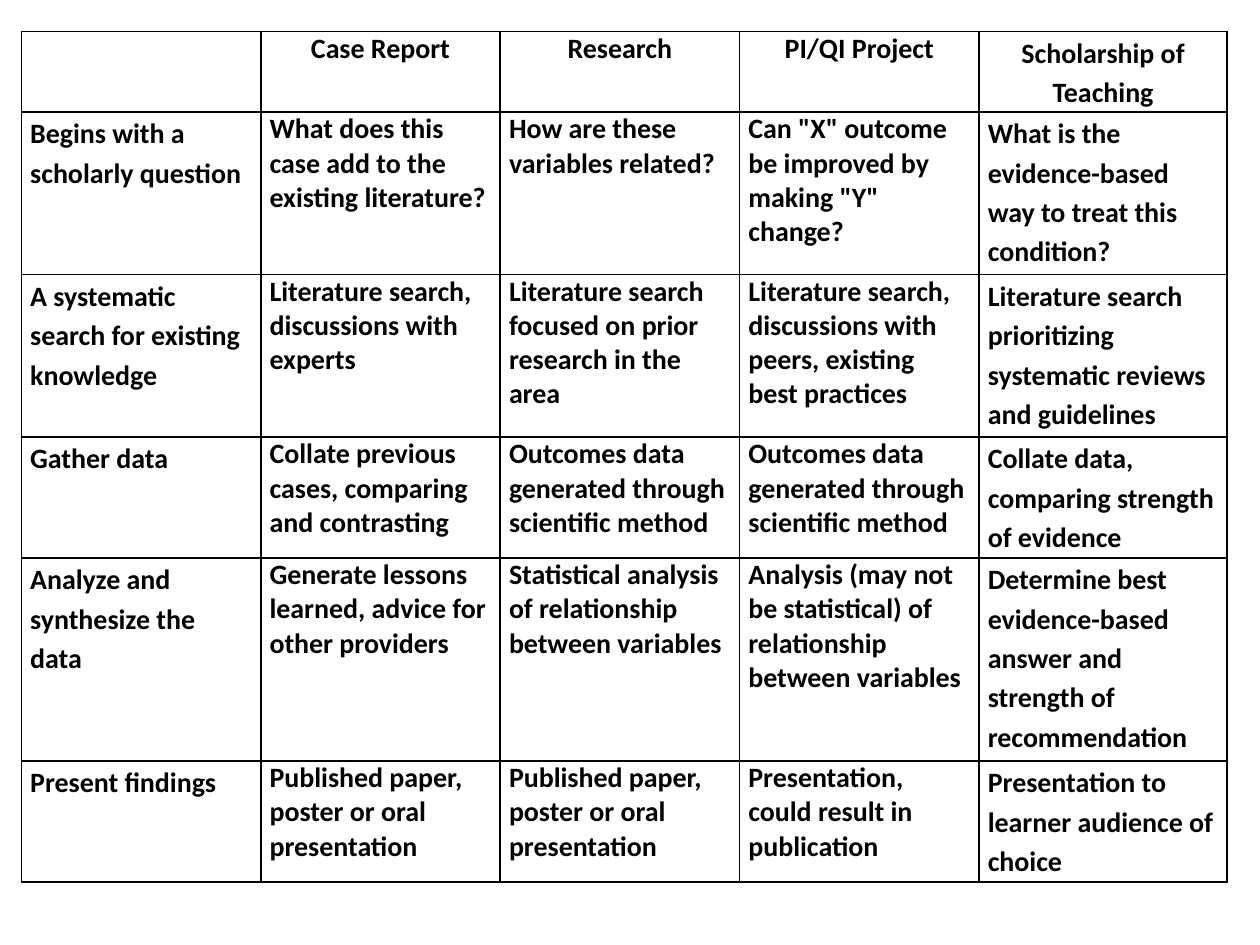
from lxml import etree
from pptx import Presentation, util as u
from pptx.dml.color import RGBColor
from pptx.enum import text
from pptx.oxml import ns

SLIDE_SIZE = (10, 7.5)
TABLE_ORIGIN = (0.17, 0.25)
COLUMN_WIDTHS = [1.9] * 4 + [1.97]
ROW_HEIGHTS = [0.64, 1.29, 1.29, 0.96, 1.61, 0.96]
INK = "000000"
FONT = {"name": "Calibri", "size": u.Pt(16), "bold": True}
MARGINS = {
    "margin_left": u.Inches(0.07),
    "margin_right": u.Inches(0.07),
    "margin_top": 0,
    "margin_bottom": 0,
}
LOOSE_SPACING = 1.15
LOOSE_COLUMNS = (0, 4)

ROWS = [
    ["", "Case Report", "Research", "PI/QI Project", "Scholarship of Teaching"],
    [
        "Begins with a scholarly question",
        "What does this case add to the existing literature?",
        "How are these variables related?",
        'Can "X" outcome be improved by making "Y" change?',
        "What is the evidence-based way to treat this condition?",
    ],
    [
        "A systematic search for existing knowledge",
        "Literature search, discussions with experts",
        "Literature search focused on prior research in the area",
        "Literature search, discussions with peers, existing best practices",
        "Literature search prioritizing systematic reviews and guidelines",
    ],
    [
        "Gather data",
        "Collate previous cases, comparing and contrasting",
        "Outcomes data generated through scientific method",
        "Outcomes data generated through scientific method",
        "Collate data, comparing strength of evidence",
    ],
    [
        "Analyze and synthesize the data",
        "Generate lessons learned, advice for other providers",
        "Statistical analysis of relationship between variables",
        "Analysis (may not be statistical) of relationship between variables",
        "Determine best evidence-based answer and strength of recommendation",
    ],
    [
        "Present findings",
        "Published paper, poster or oral presentation",
        "Published paper, poster or oral presentation",
        "Presentation, could result in publication",
        "Presentation to learner audience of choice",
    ],
]


def color(value):
    return RGBColor.from_string(value)


def apply(target, values):
    for name, value in values.items():
        setattr(target, name, value)


def add_borders(cell):
    properties = cell._tc.get_or_add_tcPr()
    for position, side in enumerate(("lnL", "lnR", "lnT", "lnB")):
        line = etree.Element(ns.qn(f"a:{side}"), w=str(u.Pt(1)))
        fill = etree.SubElement(line, ns.qn("a:solidFill"))
        etree.SubElement(fill, ns.qn("a:srgbClr"), val=INK)
        properties.insert(position, line)


def fill_cell(cell, content, row, column):
    apply(cell, MARGINS)
    cell.fill.background()
    add_borders(cell)
    cell.text = content
    paragraph = cell.text_frame.paragraphs[0]
    apply(paragraph.font, FONT)
    for run in paragraph.runs:
        apply(run.font, FONT)
        run.font.color.rgb = color(INK)
    if row == 0:
        paragraph.alignment = text.PP_ALIGN.CENTER
    if column in LOOSE_COLUMNS:
        paragraph.line_spacing = LOOSE_SPACING


def main():
    presentation = Presentation()
    presentation.slide_width, presentation.slide_height = map(u.Inches, SLIDE_SIZE)
    slide = presentation.slides.add_slide(presentation.slide_layouts[6])
    extent = (*TABLE_ORIGIN, sum(COLUMN_WIDTHS), sum(ROW_HEIGHTS))
    table = slide.shapes.add_table(
        len(ROWS), len(COLUMN_WIDTHS), *map(u.Inches, extent)
    ).table
    apply(table, {"first_row": False, "horz_banding": False})
    for column, width in zip(table.columns, COLUMN_WIDTHS):
        column.width = u.Inches(width)
    for row, height in zip(table.rows, ROW_HEIGHTS):
        row.height = u.Inches(height)
    for row, contents in enumerate(ROWS):
        for column, content in enumerate(contents):
            fill_cell(table.cell(row, column), content, row, column)
    presentation.save("out.pptx")


if __name__ == "__main__":
    main()
